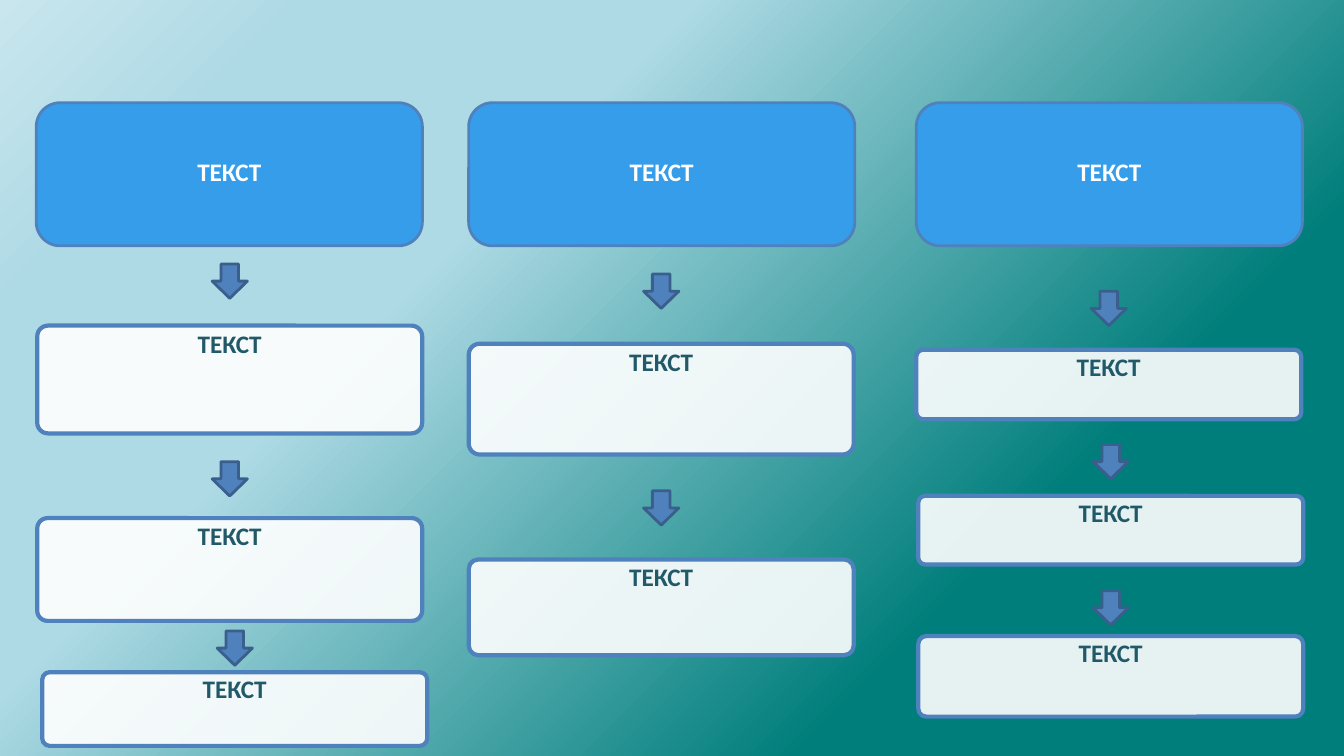
from lxml.etree import SubElement
from pptx import Presentation
from pptx.dml.color import RGBColor
from pptx.enum.shapes import MSO_SHAPE
from pptx.enum.text import MSO_ANCHOR, PP_ALIGN
from pptx.oxml import parse_xml
from pptx.oxml.ns import nsdecls, qn
from pptx.util import Pt

LABEL = "ТЕКСТ"
COLORS = {
    "header": "369DEA", "blue": "4F81BD", "arrow_line": "3A5F8C",
    "white": "FFFFFF", "card_text": "215968",
}
BACKDROP = [(26, "007E7B"), (67, "AEDAE5"), (85, "AEDAE5"), (100, "C9E6EE")]
BACKDROP_ANGLE = 225

HEADER_TOP, HEADER_WIDTH, HEADER_HEIGHT = 73.4, 275.8, 102.2
CARD_WIDTH = 275
ARROW_WIDTH, ARROW_HEIGHT = 25.2, 24.5

# fmt: header left, then steps as (arrow top, card left, card top, card height)
COLUMNS = [
    (25.9, [(188.6, 26.6, 232.6, 77), (329.8, 26.6, 370.1, 73.4), (450.7, 30.2, 480.2, 52.6)]),
    (334.8, [(195.8, 334.8, 245.5, 79.2), (350.6, 334.8, 399.6, 68.4)]),
    (654.5, [(208.1, 654.5, 249.8, 49.7), (317.5, 655.9, 354.2, 49), (421.9, 655.9, 454.3, 57.6)]),
]


def paint_backdrop(page):
    stops = "".join(
        f'<a:gs pos="{position * 1000}"><a:srgbClr val="{color}"/></a:gs>'
        for position, color in BACKDROP
    )
    page.element.cSld.insert(0, parse_xml(
        f'<p:bg {nsdecls("p", "a")}><p:bgPr><a:gradFill><a:gsLst>{stops}</a:gsLst>'
        f'<a:lin ang="{BACKDROP_ANGLE * 60000}" scaled="0"/></a:gradFill>'
        f'<a:effectLst/></p:bgPr></p:bg>'
    ))


def add_box(page, kind, place, fill, line, line_width):
    box = page.shapes.add_shape(kind, *(Pt(length) for length in place))
    box.shadow.inherit = False
    box.fill.solid()
    box.fill.fore_color.rgb = RGBColor.from_string(COLORS[fill])
    box.line.color.rgb = RGBColor.from_string(COLORS[line])
    box.line.width = Pt(line_width)
    return box


def write_label(box, color, anchor):
    frame = box.text_frame
    frame.word_wrap = True
    frame.vertical_anchor = anchor
    para = frame.paragraphs[0]
    para.text = LABEL
    para.alignment = PP_ALIGN.CENTER
    para.line_spacing = 0.8
    para.font.name = "Calibri"
    para.font.size = Pt(18)
    para.font.bold = True
    para.font.color.rgb = RGBColor.from_string(COLORS[color])


def add_header(page, left):
    place = (left, HEADER_TOP, HEADER_WIDTH, HEADER_HEIGHT)
    header = add_box(page, MSO_SHAPE.ROUNDED_RECTANGLE, place, "header", "blue", 2)
    write_label(header, "white", MSO_ANCHOR.MIDDLE)


def add_step(page, arrow_top, left, top, height):
    arrow_left = left + (CARD_WIDTH - ARROW_WIDTH) / 2
    arrow_place = (arrow_left, arrow_top, ARROW_WIDTH, ARROW_HEIGHT)
    add_box(page, MSO_SHAPE.DOWN_ARROW, arrow_place, "blue", "arrow_line", 2)
    card_place = (left, top, CARD_WIDTH, height)
    card = add_box(page, MSO_SHAPE.ROUNDED_RECTANGLE, card_place, "white", "blue", 3)
    card.adjustments[0] = 0.1
    fill_color = card.element.spPr.find(qn("a:solidFill"))[0]
    SubElement(fill_color, qn("a:alpha"), val="90000")
    write_label(card, "card_text", MSO_ANCHOR.TOP)


def main():
    """Build a slide with three columns of steps joined by arrows."""
    deck = Presentation()
    deck.slide_width, deck.slide_height = Pt(960), Pt(540)
    page = deck.slides.add_slide(deck.slide_layouts[6])
    paint_backdrop(page)
    for header_left, steps in COLUMNS:
        add_header(page, header_left)
        for step in steps:
            add_step(page, *step)
    deck.save("out.pptx")


if __name__ == "__main__":
    main()
